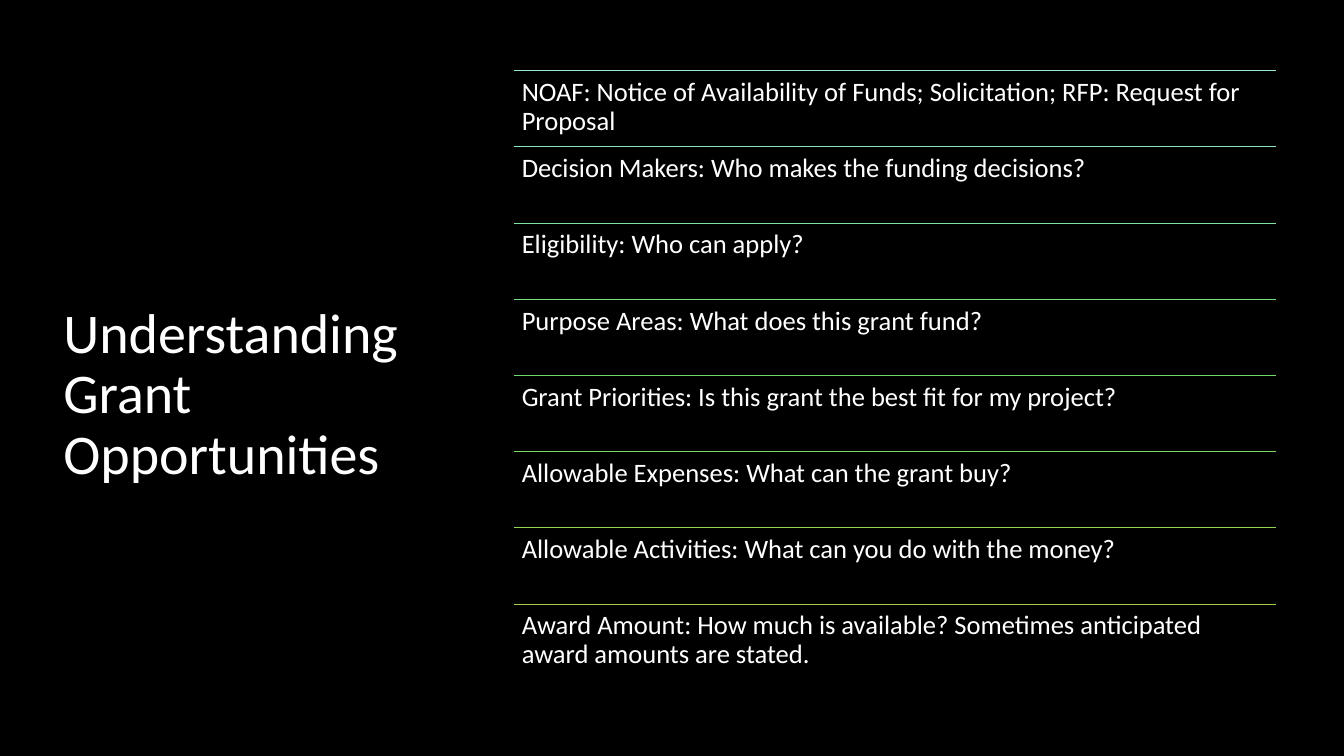
from lxml import etree
from pptx import Presentation
from pptx.dml.color import RGBColor
from pptx.enum.shapes import MSO_CONNECTOR as Connector
from pptx.enum.text import MSO_ANCHOR as Anchor
from pptx.oxml.ns import qn
from pptx.util import Cm, Pt

COLORS = {"background": "000000", "text": "FFFFFF"}
TOPICS = [
    ("NOAF: Notice of Availability of Funds; Solicitation; RFP: Request for Proposal", "97E9D5"),
    ("Decision Makers: Who makes the funding decisions?", "8BE6BD"),
    ("Eligibility: Who can apply?", "80E2A2"),
    ("Purpose Areas: What does this grant fund?", "75DF84"),
    ("Grant Priorities: Is this grant the best fit for my project?", "70DB6A"),
    ("Allowable Expenses: What can the grant buy?", "7ED75F"),
    ("Allowable Activities: What can you do with the money?", "8ED354"),
    ("Award Amount: How much is available? Sometimes anticipated award amounts are stated.", "A2CF49"),
]
LIST_LEFT, LIST_TOP, LIST_WIDTH = 12.95, 1.78, 19.2
ROW_HEIGHT = 1.92
ROW_INSET = 0.2

deck = Presentation()
deck.slide_width, deck.slide_height = Cm(33.87), Cm(19.05)
page = deck.slides.add_slide(deck.slide_layouts[6])
page.background.fill.solid()
page.background.fill.fore_color.rgb = RGBColor.from_string(COLORS["background"])


def add_text(left, top, width, height, text, size):
    box = page.shapes.add_textbox(Cm(left), Cm(top), Cm(width), Cm(height))
    box.text_frame.word_wrap = True
    para = box.text_frame.paragraphs[0]
    para.line_spacing = 0.9
    span = para.add_run()
    span.text = text
    span.font.name = "Calibri"
    span.font.size = Pt(size)
    span.font.color.rgb = RGBColor.from_string(COLORS["text"])
    return box.text_frame


title = add_text(1.35, 3.78, 9.37, 12.37, "Understanding Grant Opportunities", 40)
title.vertical_anchor = Anchor.MIDDLE

for row, (topic, line_color) in enumerate(TOPICS):
    top = LIST_TOP + row * ROW_HEIGHT
    rule = page.shapes.add_connector(
        Connector.STRAIGHT, Cm(LIST_LEFT), Cm(top), Cm(LIST_LEFT + LIST_WIDTH), Cm(top))
    rule.line.color.rgb = RGBColor.from_string(line_color)
    rule.line.width = Pt(0.5)
    etree.SubElement(rule._element.spPr, qn("a:effectLst"))

    frame = add_text(LIST_LEFT, top, LIST_WIDTH, ROW_HEIGHT, topic, 19)
    frame.margin_left = frame.margin_right = Cm(ROW_INSET)
    frame.margin_top = frame.margin_bottom = Cm(ROW_INSET)

deck.save("out.pptx")
